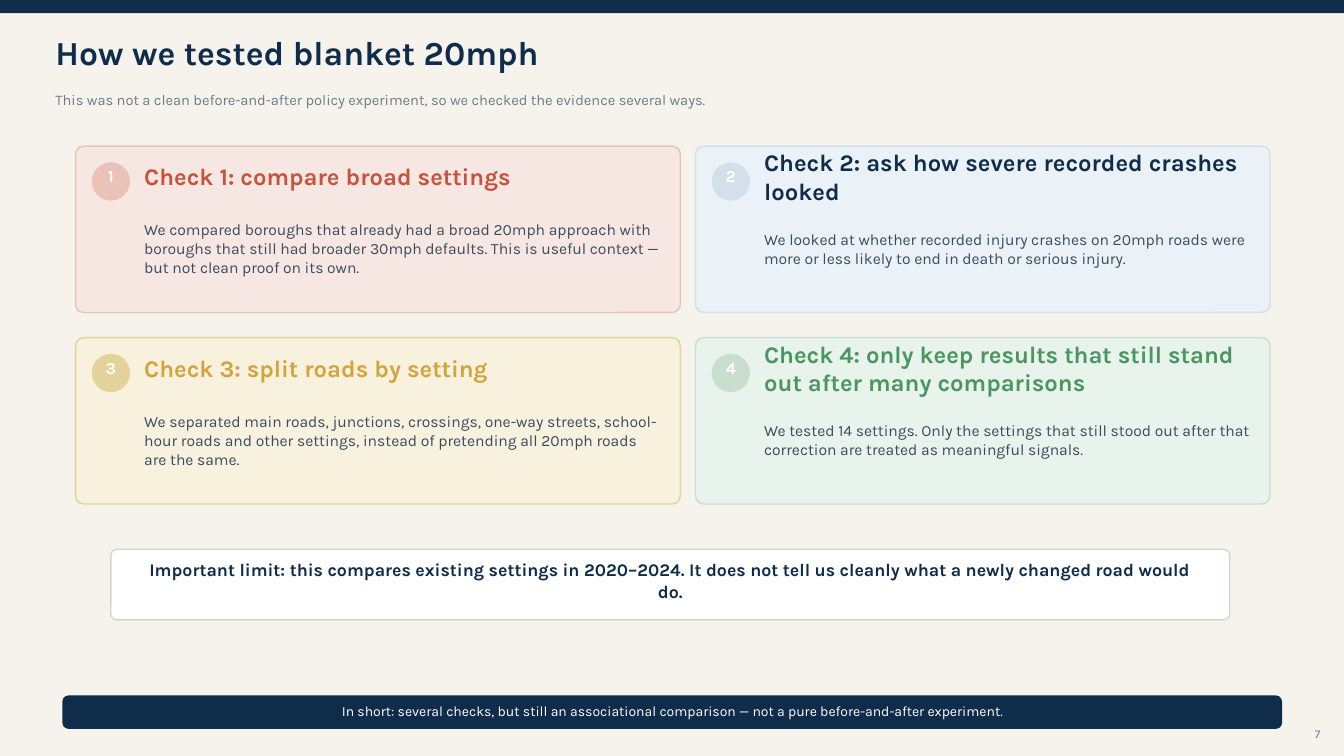
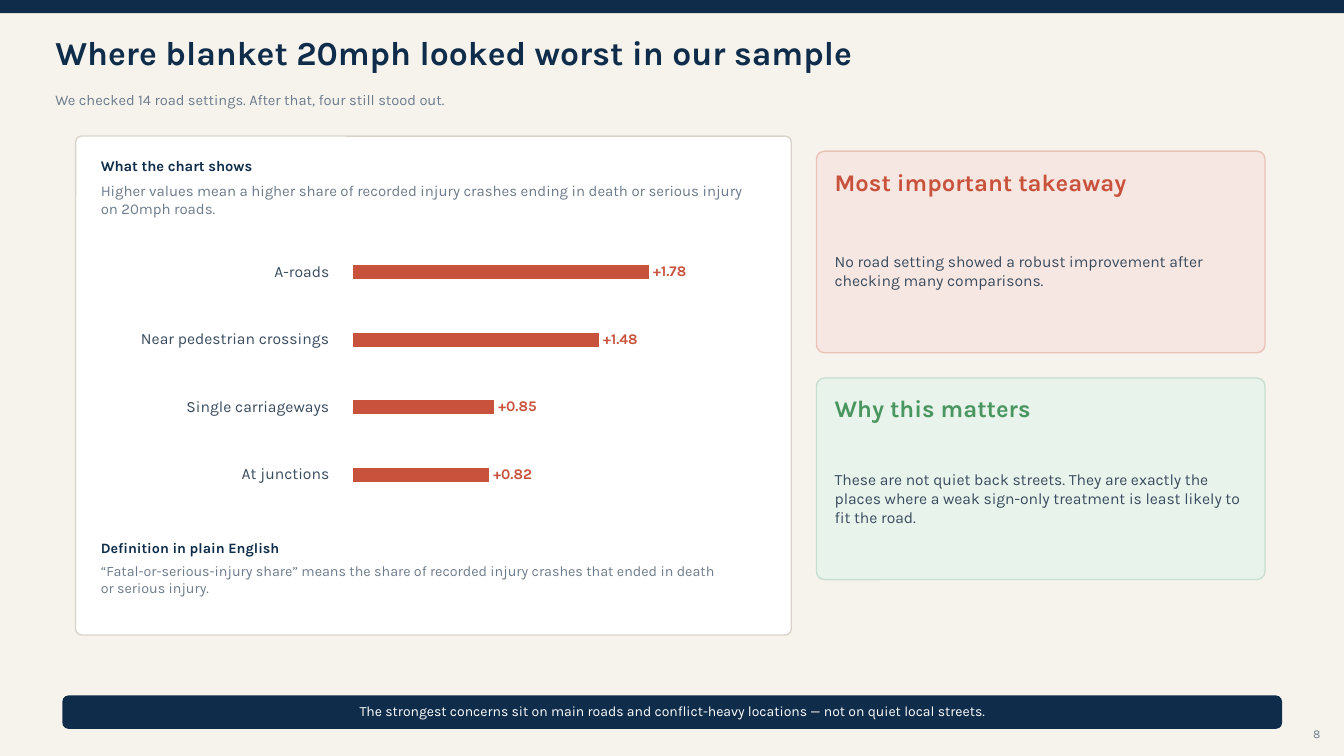
from collections import namedtuple
from dataclasses import dataclass

from lxml.etree import SubElement as Sub
from pptx import Presentation
from pptx.chart.data import CategoryChartData as Data
from pptx.dml.color import RGBColor as Rgb
from pptx.enum.chart import XL_CHART_TYPE as Kind
from pptx.enum.chart import XL_LABEL_POSITION as Spot
from pptx.enum.chart import XL_TICK_LABEL_POSITION as Tick
from pptx.enum.chart import XL_TICK_MARK as Mark
from pptx.enum.shapes import MSO_SHAPE as Form
from pptx.enum.text import MSO_ANCHOR as Anchor
from pptx.enum.text import PP_ALIGN as Align
from pptx.oxml.ns import qn
from pptx.util import Pt

Tone = namedtuple("Tone", "fill edge ink")
Box = namedtuple("Box", "x y w h")
Style = namedtuple("Style", "size ink bold", defaults=(False,))


@dataclass(frozen=True)
class Theme:
    # Colours
    font: str = "Karla"
    page: str = "F6F3ED"
    navy: str = "0F2D4A"
    white: str = "FFFFFF"
    rule: str = "D9D4CB"
    slate: str = "394B5E"
    red: Tone = Tone("F7E7E2", "EAC2B8", "C9523C")
    blue: Tone = Tone("EAF2F8", "D3DFEA", navy)
    gold: Tone = Tone("F8F1DE", "E3D39A", "D2A43C")
    green: Tone = Tone("E8F3EB", "C8DECF", "4A9660")
    # Type
    title: Style = Style(24, navy, True)
    sub: Style = Style(10.5, "6C7B8B")
    small: Style = Style(8.5, "6C7B8B")
    foot: Style = Style(10, white)
    body: Style = Style(11.2, slate)
    badge: Style = Style(12, white, True)
    limit: Style = Style(12.7, navy, True)
    lead: Style = Style(10.5, navy, True)
    note: Style = Style(10.7, "6C7B8B")
    term: Style = Style(10.2, navy, True)
    gloss: Style = Style(10.2, "6C7B8B")
    head: float = 17
    value: float = 10.5
    # Corner radii
    soft: float = 5.7
    tight: float = 4.3


T = Theme()
WIDE, HIGH = 960, 540


def ink(font, style):
    font.name = T.font
    font.size = Pt(style.size)
    font.bold = style.bold
    font.color.rgb = Rgb.from_string(style.ink)


def write(shape, text, style, align=Align.LEFT, side=0, lift=0):
    """Put one paragraph in a shape; lift is the bottom inset."""
    frame = shape.text_frame
    frame.word_wrap = True
    frame.vertical_anchor = Anchor.MIDDLE
    frame.margin_left = frame.margin_right = Pt(side)
    frame.margin_top, frame.margin_bottom = Pt(0), Pt(lift)
    frame.text = text
    para = frame.paragraphs[0]
    para.alignment = align
    for run in para.runs:
        ink(run.font, style)


def label(slide, box, text, style, align=Align.LEFT):
    write(slide.shapes.add_textbox(*map(Pt, box)), text, style, align)


def block(slide, form, box, fill, edge=None, round=None):
    shape = slide.shapes.add_shape(form, *map(Pt, box))
    shape.shadow.inherit = False
    shape.fill.solid()
    shape.fill.fore_color.rgb = Rgb.from_string(fill)
    if edge:
        shape.line.color.rgb = Rgb.from_string(edge)
        shape.line.width = Pt(1)
    else:
        shape.line.fill.background()
    if round:
        shape.adjustments[0] = round / min(box.w, box.h)
    return shape


def panel(slide, box, fill, edge=None, round=T.tight):
    return block(slide, Form.ROUNDED_RECTANGLE, box, fill, edge, round)


def card(slide, box, tone, head, body, num=None):
    """Tinted card with heading and body, and a badge if numbered."""
    x, y, w, h = box
    panel(slide, box, tone.fill, tone.edge, T.soft)
    pad = 13
    if num:
        pad = 49
        dot = block(slide, Form.OVAL, Box(x + 11.5, y + 11.5, 27.4, 27.4), tone.edge)
        write(dot, str(num), T.badge, Align.CENTER, lift=8)
    left, span = x + pad, w - pad - 13
    label(slide, Box(left, y + 11.5, span, 20.2), head, Style(T.head, tone.ink, True))
    label(slide, Box(left, y + 38.9, span, h - 50.4), body, T.body)


def base(deck, num, title, sub, foot):
    """Blank slide with the shared band, titles, footer and number."""
    slide = deck.slides.add_slide(deck.slide_layouts[6])
    slide.background.fill.solid()
    slide.background.fill.fore_color.rgb = Rgb.from_string(T.page)
    block(slide, Form.RECTANGLE, Box(0, 0, WIDE, 9.4), T.navy)
    label(slide, Box(39.6, 24.5, 864, 25.9), title, T.title)
    label(slide, Box(39.6, 59, 864, 24.5), sub, T.sub)
    label(slide, Box(928.8, 518.4, 14.4, 10.8), str(num), T.small, Align.RIGHT)
    bar = panel(slide, Box(44.6, 496.8, 871.2, 23.8), T.navy)
    write(bar, foot, T.foot, Align.CENTER, side=14.4, lift=2)
    return slide


def fix(chart, frame, plot):
    """Pin the inner plot area to a given box inside the chart frame."""
    area = chart.plots[0]._element.getparent()
    old = area.find(qn("c:layout"))
    if old is not None:
        area.remove(old)
    lay = Sub(area, qn("c:layout"))
    area.insert(0, lay)
    man = Sub(lay, qn("c:manualLayout"))
    marks = [
        ("layoutTarget", "inner"), ("xMode", "edge"), ("yMode", "edge"),
        ("x", (plot.x - frame.x) / frame.w), ("y", (plot.y - frame.y) / frame.h),
        ("w", plot.w / frame.w), ("h", plot.h / frame.h),
    ]
    for name, val in marks:
        Sub(man, qn("c:" + name)).set("val", str(val))


def bars(slide, frame, rows):
    """Horizontal bar chart with signed value labels."""
    data = Data(number_format="+0.00")
    data.categories = [name for name, _ in rows]
    data.add_series("Share", [val for _, val in rows])
    chart = slide.shapes.add_chart(Kind.BAR_CLUSTERED, *map(Pt, frame), data).chart
    ink(chart.font, T.body)
    chart.has_legend = chart.has_title = False

    # Axes: the range starts below zero to leave a gap beside the names
    low, top, unit, pitch, thick = -0.08, 2.4, 119, 48.24, 10.08
    axis = chart.value_axis
    axis.minimum_scale, axis.maximum_scale = low, top
    axis.has_major_gridlines = False
    axis.visible = False
    names = chart.category_axis
    names.reverse_order = True
    names.tick_label_position = Tick.LOW
    names.major_tick_mark = names.minor_tick_mark = Mark.NONE
    names.format.line.fill.background()
    ink(names.tick_labels.font, T.body)

    # Bars and their values
    plot = chart.plots[0]
    plot.vary_by_categories = False
    plot.gap_width = round((pitch - thick) / thick * 100)
    fill = plot.series[0].format.fill
    fill.solid()
    fill.fore_color.rgb = Rgb.from_string(T.red.ink)
    plot.has_data_labels = True
    tags = plot.data_labels
    tags.show_value = True
    tags.number_format, tags.number_format_is_linked = "+0.00", False
    tags.position = Spot.OUTSIDE_END
    ink(tags.font, Style(T.value, T.red.ink, True))

    zero = 252
    fix(chart, frame, Box(zero + low * unit, 170.3, (top - low) * unit, pitch * len(rows)))


def checks(deck):
    slide = base(
        deck, 7, "How we tested blanket 20mph",
        "This was not a clean before-and-after policy experiment, so we checked the evidence several ways.",
        "In short: several checks, but still an associational comparison — not a pure before-and-after experiment.",
    )
    # Two by two grid of checks
    cards = [
        (T.red, "Check 1: compare broad settings",
         "We compared boroughs that already had a broad 20mph approach with boroughs that still had "
         "broader 30mph defaults. This is useful context — but not clean proof on its own."),
        (T.blue, "Check 2: ask how severe recorded crashes looked",
         "We looked at whether recorded injury crashes on 20mph roads were more or less likely to end "
         "in death or serious injury."),
        (T.gold, "Check 3: split roads by setting",
         "We separated main roads, junctions, crossings, one-way streets, school-hour roads and other "
         "settings, instead of pretending all 20mph roads are the same."),
        (T.green, "Check 4: only keep results that still stand out after many comparisons",
         "We tested 14 settings. Only the settings that still stood out after that correction are "
         "treated as meaningful signals."),
    ]
    cols = [(54, 432), (496.8, 410.4)]
    for i, (tone, head, body) in enumerate(cards):
        row, col = divmod(i, 2)
        x, w = cols[col]
        card(slide, Box(x, 104.4 + row * 136.8, w, 118.8), tone, head, body, i + 1)

    # Limit
    limit = panel(slide, Box(79.2, 392.4, 799.2, 50.4), T.white, T.rule)
    write(limit,
          "Important limit: this compares existing settings in 2020–2024. "
          "It does not tell us cleanly what a newly changed road would do.",
          T.limit, Align.CENTER, side=18, lift=6)


def worst(deck):
    slide = base(
        deck, 8, "Where blanket 20mph looked worst in our sample",
        "We checked 14 road settings. After that, four still stood out.",
        "The strongest concerns sit on main roads and conflict-heavy locations — not on quiet local streets.",
    )
    # Chart panel
    panel(slide, Box(54, 97.2, 511.2, 356.4), T.white, T.rule)
    notes = [
        (111.6, 144, 13, T.lead, "What the chart shows"),
        (128.2, 460.8, 28.8, T.note,
         "Higher values mean a higher share of recorded injury crashes ending in death or serious "
         "injury on 20mph roads."),
        (385.2, 158.4, 11.5, T.term, "Definition in plain English"),
        (400.3, 439.2, 27.4, T.gloss,
         "“Fatal-or-serious-injury share” means the share of recorded injury crashes that ended in "
         "death or serious injury."),
    ]
    for y, w, h, style, text in notes:
        label(slide, Box(72, y, w, h), text, style)
    bars(slide, Box(72, 165.6, 475.2, 201.6), [
        ("A-roads", 1.78),
        ("Near pedestrian crossings", 1.48),
        ("Single carriageways", 0.85),
        ("At junctions", 0.82),
    ])

    # Takeaway cards
    cards = [
        (T.red, "Most important takeaway",
         "No road setting showed a robust improvement after checking many comparisons."),
        (T.green, "Why this matters",
         "These are not quiet back streets. They are exactly the places where a weak sign-only "
         "treatment is least likely to fit the road."),
    ]
    for i, (tone, head, body) in enumerate(cards):
        card(slide, Box(583.2, 108 + i * 162, 320.4, 144), tone, head, body)


def main():
    deck = Presentation()
    deck.slide_width, deck.slide_height = Pt(WIDE), Pt(HIGH)
    checks(deck)
    worst(deck)
    deck.save("out.pptx")


if __name__ == "__main__":
    main()
